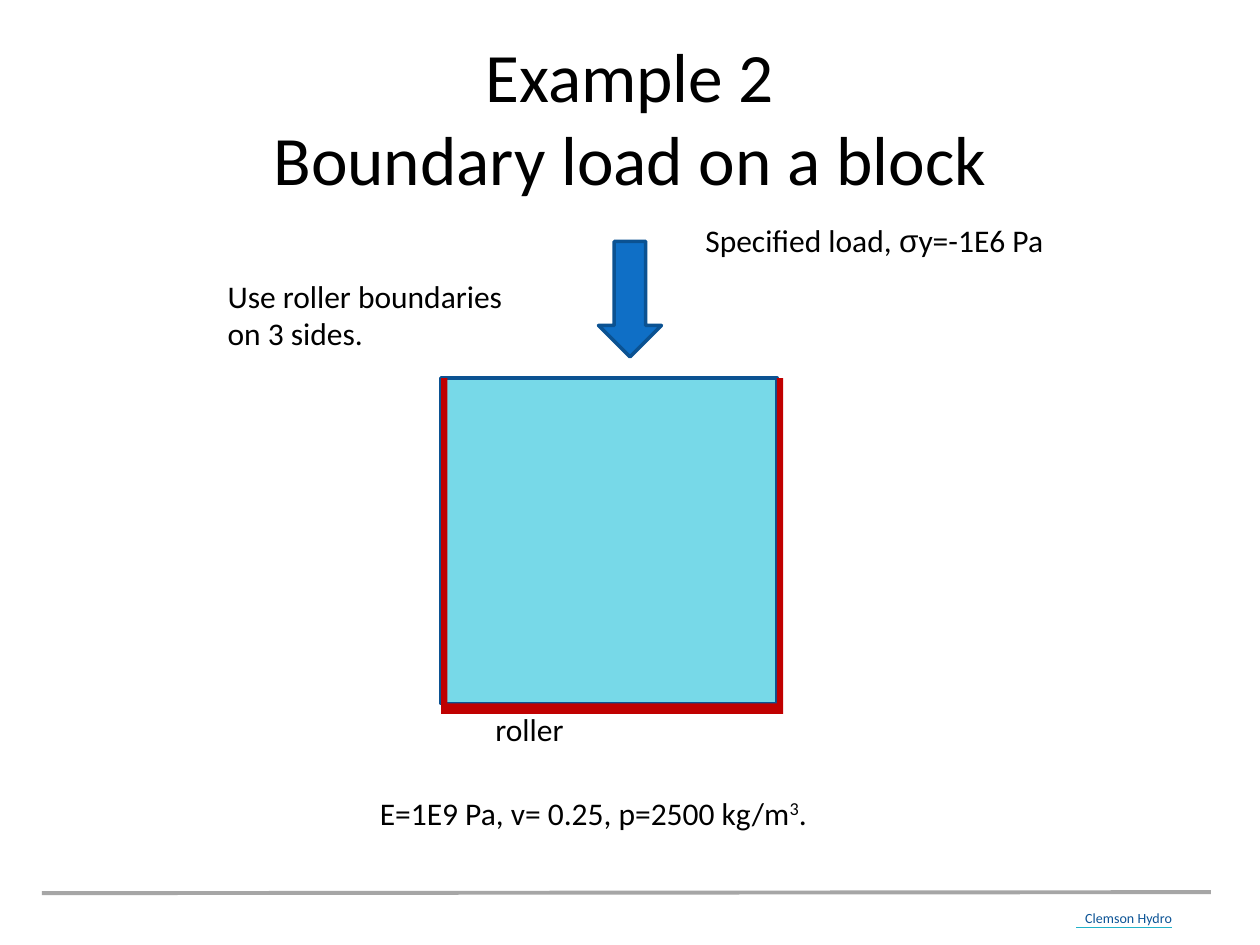
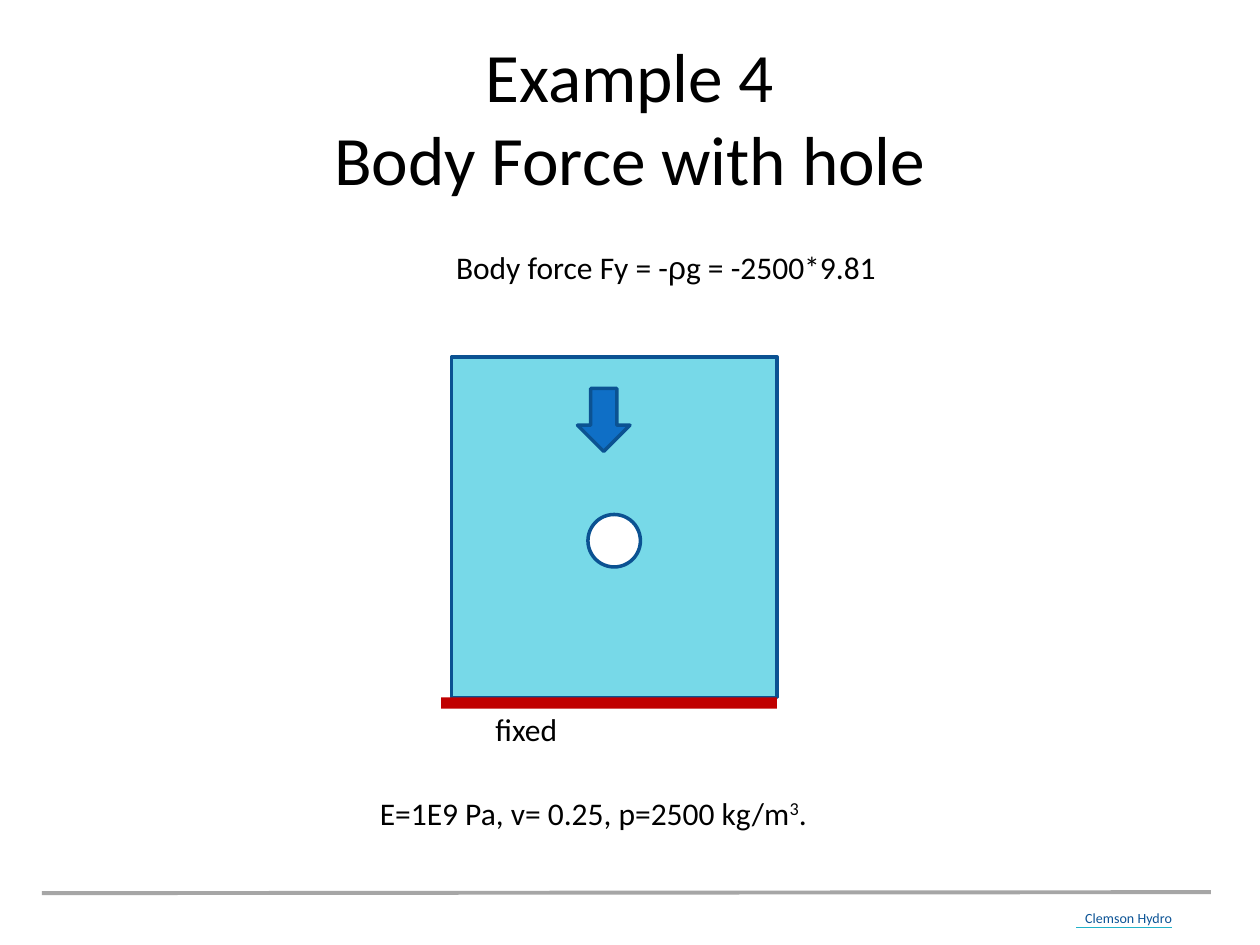
from dataclasses import dataclass

from lxml.etree import SubElement
from pptx import Presentation
from pptx.dml.color import RGBColor
from pptx.enum.shapes import MSO_CONNECTOR as Connector, MSO_SHAPE as Preset
from pptx.enum.text import MSO_ANCHOR as Anchor, PP_ALIGN as Align
from pptx.oxml.ns import qn
from pptx.util import Pt


@dataclass(frozen=True)
class Theme:
    text: str = "000000"
    block: str = "77D9E8"
    arrow: str = "0F6FC6"
    outline: str = "0B5292"
    support: str = "C00000"
    hole: str = "FFFFFF"
    rule: str = "A6A6A6"
    footer: str = "0B5395"
    footer_rule: str = "21B2C9"
    font: str = "Calibri"
    greek_font: str = "Arial"
    title_size: float = 39.6
    label_size: float = 18
    footer_size: float = 8
    outline_width: float = 2


THEME = Theme()
LINE_BREAK = "\n"
MATERIAL = ["E=1E9 Pa, v= 0.25, p=2500 kg/m", ("3", {"superscript": True}), "."]


def color(value):
    return RGBColor.from_string(value)


def greek(letter):
    return letter, {"name": THEME.greek_font}


def points(values):
    return [Pt(value) for value in values]


def add_text(slide, box, parts, size=THEME.label_size, fill=THEME.text,
             align=Align.LEFT, anchor=Anchor.TOP):
    """Add one paragraph; a part is a string or a (string, format) pair."""
    frame = slide.shapes.add_textbox(*points(box)).text_frame
    frame.word_wrap = True
    frame.vertical_anchor = anchor
    paragraph = frame.paragraphs[0]
    paragraph.alignment = align
    for part in parts:
        if part == LINE_BREAK:
            paragraph.add_line_break()
            continue
        text, changes = (part, {}) if isinstance(part, str) else part
        run = paragraph.add_run()
        run.text = text
        formats = {"name": THEME.font, "size": Pt(size), **changes}
        if formats.pop("superscript", False):
            run.font._element.set("baseline", "30000")
        for name, value in formats.items():
            setattr(run.font, name, value)
        run.font.color.rgb = color(fill)


def add_preset(slide, preset, box, fill, outline=None):
    shape = slide.shapes.add_shape(preset, *points(box))
    shape.shadow.inherit = False
    shape.fill.solid()
    shape.fill.fore_color.rgb = color(fill)
    if outline:
        shape.line.color.rgb = color(outline)
        shape.line.width = Pt(THEME.outline_width)
    else:
        shape.line.fill.background()


def add_line(slide, ends, fill, width):
    line = slide.shapes.add_connector(Connector.STRAIGHT, *points(ends))
    line.line.color.rgb = color(fill)
    line.line.width = Pt(width)
    SubElement(line._element.spPr, qn("a:effectLst"))


def add_block(slide, box):
    add_preset(slide, Preset.RECTANGLE, box, THEME.block, THEME.outline)


def add_support(slide, box):
    add_preset(slide, Preset.RECTANGLE, box, THEME.support)


def add_load_arrow(slide, box):
    add_preset(slide, Preset.DOWN_ARROW, box, THEME.arrow, THEME.outline)


def add_example_slide(presentation, number, subject, support_name):
    """Start a slide with the title, labels and footer every example has."""
    slide = presentation.slides.add_slide(presentation.slide_layouts[6])
    add_line(slide, (24, 510.4, 692, 509.8), THEME.rule, 2.25)
    add_text(slide, (612, 516, 66, 17), ["Clemson Hydro"],
             THEME.footer_size, THEME.footer, Align.CENTER)
    add_line(slide, (615, 530, 669.6, 530), THEME.footer_rule, 0.75)
    add_text(slide, (36, 21.6, 648, 90),
             [f"Example {number}", LINE_BREAK, subject],
             THEME.title_size, align=Align.CENTER, anchor=Anchor.MIDDLE)
    add_text(slide, (210, 450, 396, 29), MATERIAL)
    add_text(slide, (276, 402, 120, 29), [support_name])
    return slide


def add_boundary_load(presentation):
    slide = add_example_slide(presentation, 2, "Boundary load on a block", "roller")
    left, top, width, height = 252, 216, 192, 186
    base, side = 6, 3.6
    add_block(slide, (left, top, width, height))
    add_support(slide, (left, top + height, width, base))
    for side_left in (left, left + width):
        add_support(slide, (side_left, top, side, height + base))
    add_load_arrow(slide, (342, 138, 36, 66))
    add_text(slide, (396, 123, 246, 29),
             ["Specified load, ", greek("σ"), "y=-1E6 Pa"])
    add_text(slide, (123, 154.5, 174, 51), ["Use roller boundaries on 3 sides."])


def add_body_force(presentation):
    slide = add_example_slide(presentation, 4, "Body Force with hole", "fixed")
    add_block(slide, (258, 204, 186, 194.5))
    add_support(slide, (252, 398.5, 192, 6.5))
    add_load_arrow(slide, (330, 222, 30, 36))
    add_text(slide, (253.5, 138, 270, 29),
             ["Body force Fy = -", greek("ρ"), "g = -2500*9.81"])
    add_preset(slide, Preset.OVAL, (336, 294, 30, 30), THEME.hole, THEME.outline)


def main():
    presentation = Presentation()
    presentation.slide_width, presentation.slide_height = Pt(720), Pt(540)
    add_boundary_load(presentation)
    add_body_force(presentation)
    presentation.save("out.pptx")


if __name__ == "__main__":
    main()
